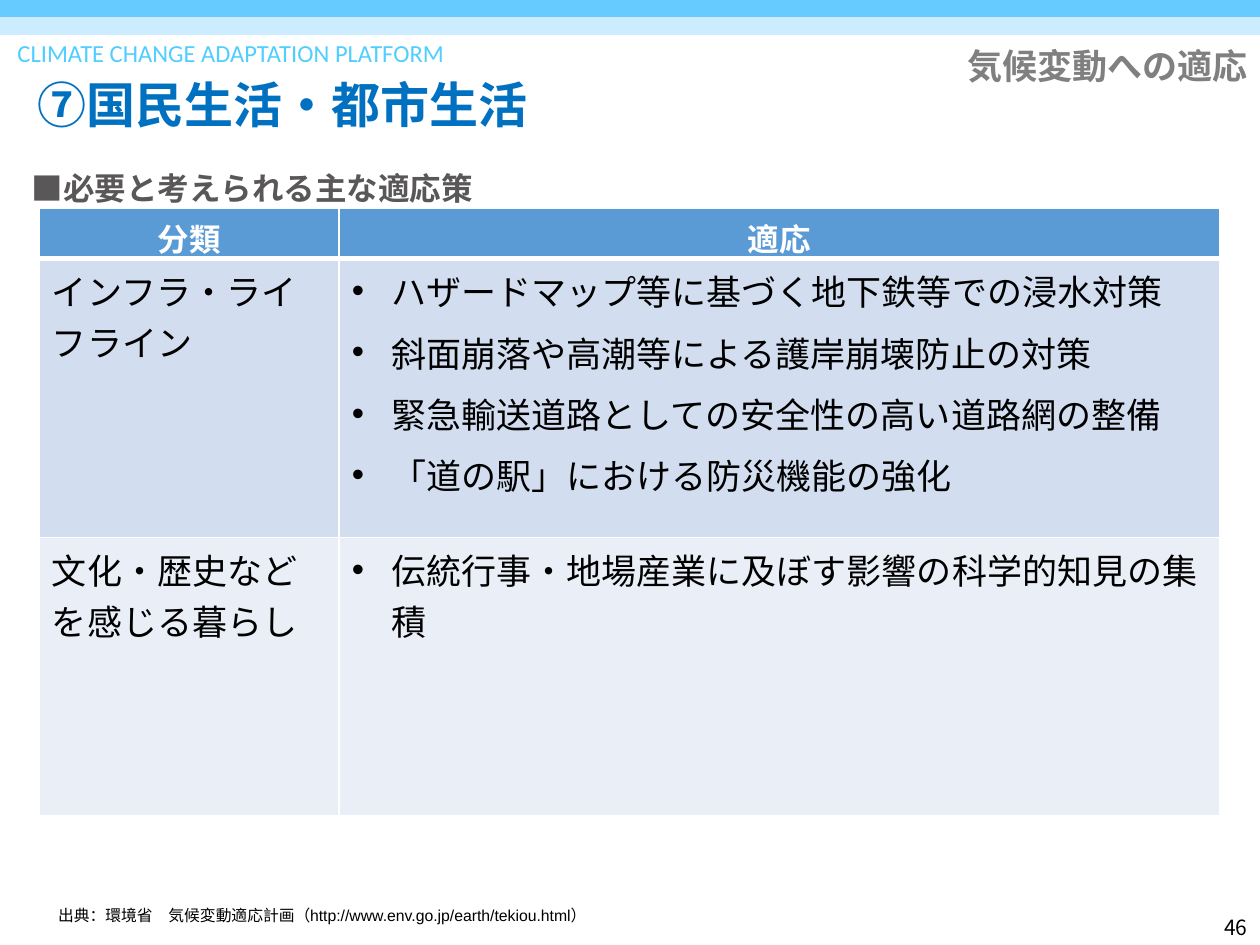
from pptx import Presentation
from pptx.dml.color import RGBColor
from pptx.enum.shapes import MSO_SHAPE
from pptx.enum.text import MSO_ANCHOR, MSO_AUTO_SIZE, PP_ALIGN
from pptx.oxml.ns import qn
from pptx.util import Pt
from lxml.etree import SubElement

SKY = RGBColor(0x66, 0xCC, 0xFF)
PALE_SKY = RGBColor(0xCC, 0xEC, 0xFF)
PLATFORM_BLUE = RGBColor(0x4F, 0xCE, 0xFF)
TITLE_BLUE = RGBColor(0x00, 0x70, 0xC0)
GREY = RGBColor(0x80, 0x80, 0x80)
DARK_GREY = RGBColor(0x59, 0x57, 0x57)
BLACK = RGBColor(0, 0, 0)
WHITE = RGBColor(0xFF, 0xFF, 0xFF)
HEADER_BLUE = RGBColor(0x5B, 0x9B, 0xD5)
ROW_FILLS = [RGBColor(0xD2, 0xDE, 0xEF), RGBColor(0xEA, 0xEF, 0xF7)]

JAPANESE = "Noto Sans CJK JP"
LATIN = "Arial"

HEADERS = ["分類", "適応"]
MEASURES = [
    ("インフラ・ライフライン", [
        "ハザードマップ等に基づく地下鉄等での浸水対策",
        "斜面崩落や高潮等による護岸崩壊防止の対策",
        "緊急輸送道路としての安全性の高い道路網の整備",
        "「道の駅」における防災機能の強化",
    ]),
    ("文化・歴史などを感じる暮らし", [
        "伝統行事・地場産業に及ぼす影響の科学的知見の集積",
    ]),
]


def style_paragraph(paragraph, size, color, face=JAPANESE, bold=False,
                    align=PP_ALIGN.LEFT, spacing=None, before=0):
    paragraph.alignment = align
    paragraph.space_before = Pt(before)
    if spacing:
        paragraph.line_spacing = spacing
    font = paragraph.font
    font.size = Pt(size)
    font.bold = bold
    font.name = face
    font.color.rgb = color
    defaults = paragraph._p.pPr.find(qn("a:defRPr"))
    SubElement(defaults, qn("a:ea"), typeface=JAPANESE)


def set_bullet(paragraph, symbol=None, margin=0, indent=0):
    properties = paragraph._p.get_or_add_pPr()
    properties.set("marL", str(Pt(margin)))
    properties.set("indent", str(Pt(indent)))
    if symbol:
        SubElement(properties, qn("a:buFont"), typeface=LATIN)
        SubElement(properties, qn("a:buChar"), char=symbol)
    else:
        SubElement(properties, qn("a:buNone"))


def add_band(slide, top, color):
    band = slide.shapes.add_shape(MSO_SHAPE.RECTANGLE, 0, Pt(top), Pt(720), Pt(10))
    band.shadow.inherit = False
    band.fill.solid()
    band.fill.fore_color.rgb = color
    band.line.fill.background()


def add_label(slide, text, left, top, width, height, inset=True, **style):
    label = slide.shapes.add_textbox(Pt(left), Pt(top), Pt(width), Pt(height))
    frame = label.text_frame
    frame.word_wrap = True
    if not inset:
        frame.margin_left = frame.margin_top = 0
        frame.margin_right = frame.margin_bottom = 0
    frame.text = text
    style_paragraph(frame.paragraphs[0], **style)


def fill_placeholder(holder, pieces, left, top, width, height, anchor,
                     margin=0, **style):
    holder.left, holder.top = Pt(left), Pt(top)
    holder.width, holder.height = Pt(width), Pt(height)
    frame = holder.text_frame
    frame.auto_size = MSO_AUTO_SIZE.NONE
    frame.vertical_anchor = anchor
    paragraph = frame.paragraphs[0]
    for text, face in pieces:
        run = paragraph.add_run()
        run.text = text
        if face:
            run.font.name = face
    set_bullet(paragraph, margin=margin)
    style_paragraph(paragraph, **style)


def set_borders(cell, bottom=1):
    properties = cell._tc.get_or_add_tcPr()
    widths = {"lnL": 1, "lnR": 1, "lnT": 1, "lnB": bottom}
    for position, (side, width) in enumerate(widths.items()):
        line = properties.makeelement(qn(f"a:{side}"), {"w": str(Pt(width))})
        fill = SubElement(line, qn("a:solidFill"))
        SubElement(fill, qn("a:srgbClr"), val=str(WHITE))
        properties.insert(position, line)


def fill_cell(cell, lines, fill, bottom=1, bullet=False, **style):
    cell.fill.solid()
    cell.fill.fore_color.rgb = fill
    set_borders(cell, bottom)
    frame = cell.text_frame
    frame.text = "\n".join(lines)
    for number, paragraph in enumerate(frame.paragraphs):
        if bullet:
            set_bullet(paragraph, "•", 22.5, -22.5)
        style_paragraph(paragraph, face=LATIN, before=6 if number else 0, **style)


def add_measures_table(slide):
    frame = slide.shapes.add_table(len(MEASURES) + 1, len(HEADERS),
                                   Pt(22.5), Pt(119), Pt(674.5), Pt(347))
    table = frame.table
    for column, width in zip(table.columns, (171.3, 503.2)):
        column.width = Pt(width)
    for row, height in zip(table.rows, (28, 159.3, 159.3)):
        row.height = Pt(height)
    for index, header in enumerate(HEADERS):
        cell = table.cell(0, index)
        cell.vertical_anchor = MSO_ANCHOR.MIDDLE
        fill_cell(cell, [header], HEADER_BLUE, bottom=3, size=18,
                  color=WHITE, bold=True, align=PP_ALIGN.CENTER)
    for index, (category, measures) in enumerate(MEASURES):
        fill = ROW_FILLS[index]
        fill_cell(table.cell(index + 1, 0), [category], fill, size=20, color=BLACK)
        fill_cell(table.cell(index + 1, 1), measures, fill, bullet=True,
                  size=20, color=BLACK)


def main():
    presentation = Presentation()
    presentation.slide_width, presentation.slide_height = Pt(720), Pt(540)
    slide = presentation.slides.add_slide(presentation.slide_layouts[3])
    title, heading, source = list(slide.placeholders)[:3]

    add_band(slide, 0, SKY)
    add_band(slide, 10, PALE_SKY)
    add_label(slide, "CLIMATE CHANGE ADAPTATION PLATFORM", 10, 20, 703, 18,
              inset=False, size=14, color=PLATFORM_BLUE, face="Calibri",
              spacing=Pt(18.7))
    fill_placeholder(title, [("⑦国民生活・都市生活", None)], 0, 9.5, 720, 104.5,
                     MSO_ANCHOR.MIDDLE, margin=14.4, size=28, color=TITLE_BLUE,
                     bold=True, spacing=0.9)
    fill_placeholder(source, [("出典：環境省　気候変動適応計画（http://www.env.go.jp/earth/tekiou.html）", None)],
                     26, 510, 677, 26, MSO_ANCHOR.MIDDLE, size=9, color=BLACK,
                     face=LATIN)
    add_measures_table(slide)
    add_label(slide, "気候変動への適応", 355, 24.5, 365, 28, size=20, color=GREY,
              bold=True, align=PP_ALIGN.RIGHT, spacing=0.9)
    fill_placeholder(heading, [("■", None), ("必要と考えられる主な適応策", LATIN)],
                     10.8, 88.5, 665, 165, MSO_ANCHOR.TOP, size=18,
                     color=DARK_GREY, bold=True, spacing=Pt(26))
    add_label(slide, "46", 655, 520.5, 65, 19.5, size=12, color=BLACK,
              align=PP_ALIGN.RIGHT, spacing=Pt(13))
    presentation.save("out.pptx")


if __name__ == "__main__":
    main()
